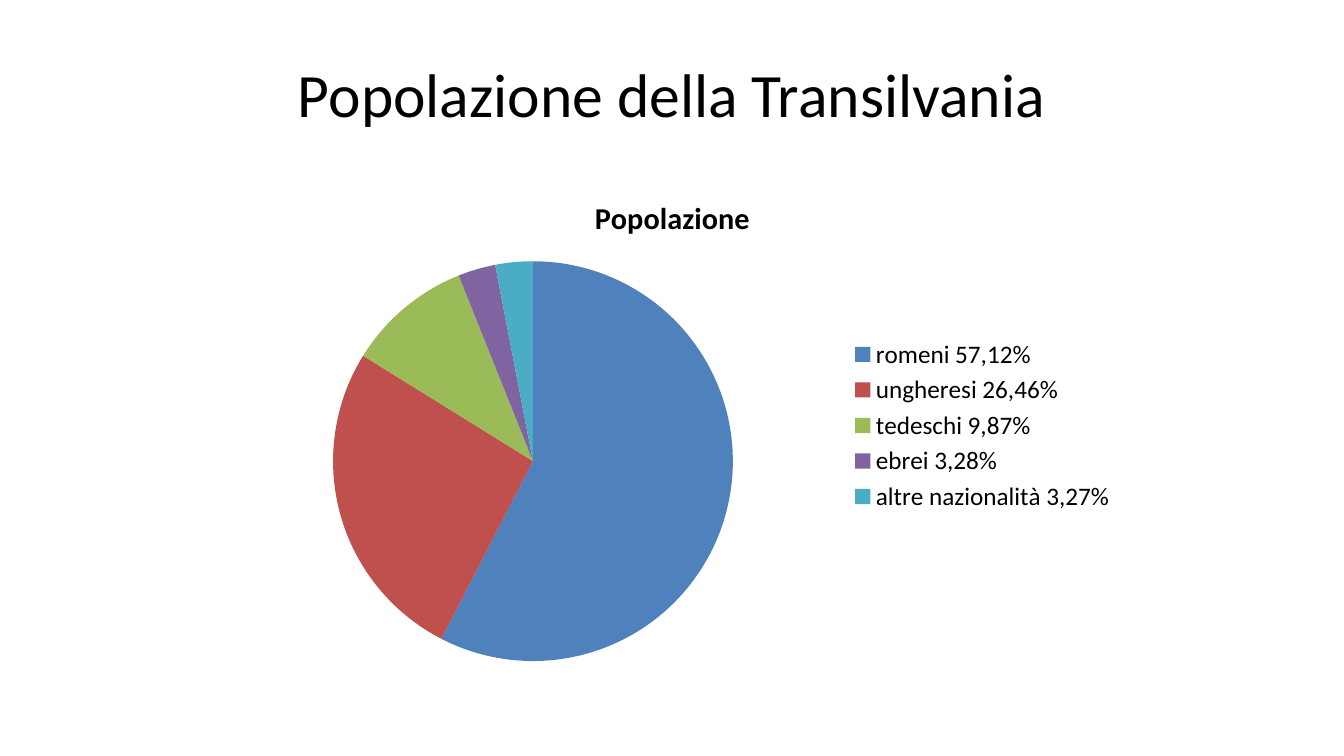
from dataclasses import dataclass

from pptx import Presentation
from pptx.chart.data import CategoryChartData
from pptx.dml.color import RGBColor
from pptx.enum.chart import XL_CHART_TYPE, XL_LEGEND_POSITION
from pptx.enum.text import MSO_ANCHOR, PP_ALIGN
from pptx.util import Emu, Pt

# Content
TITLE = "Popolazione della Transilvania"
SERIES_NAME = "Popolazione"
GROUPS = [  # label, share in whole percent, slice colour
    ("romeni 57,12%", 57, "4F81BD"),
    ("ungheresi 26,46%", 26, "C0504D"),
    ("tedeschi 9,87%", 10, "9BBB59"),
    ("ebrei 3,28%", 3, "8064A2"),
    ("altre nazionalità 3,27%", 3, "4BACC6"),
]

# Layout in px: left, top, width, height
PX_PER_INCH = 100.8
SLIDE_SIZE = (1344, 756)
TITLE_BOX = (67, 30, 1210, 126)
CHART_BOX = (219, 176, 907, 499)


@dataclass(frozen=True)
class Theme:
    font: str = "Calibri"
    text: str = "000000"
    background: str = "FFFFFF"
    title_size: float = 44
    chart_title_size: float = 21.6
    legend_size: float = 18


THEME = Theme()


def px(length):
    return Emu(round(length * 914400 / PX_PER_INCH))


def style_font(font, size, bold=False):
    font.name = THEME.font
    font.size = Pt(size)
    font.bold = bold
    font.color.rgb = RGBColor.from_string(THEME.text)


def add_title(slide):
    title = slide.shapes.title
    title.left, title.top, title.width, title.height = map(px, TITLE_BOX)
    frame = title.text_frame
    frame.word_wrap = True
    frame.vertical_anchor = MSO_ANCHOR.MIDDLE
    paragraph = frame.paragraphs[0]
    paragraph.alignment = PP_ALIGN.CENTER
    run = paragraph.add_run()
    run.text = TITLE
    style_font(run.font, THEME.title_size)


def add_population_chart(slide):
    labels, shares, colours = zip(*GROUPS)
    data = CategoryChartData()
    data.categories = labels
    data.add_series(SERIES_NAME, shares)
    chart = slide.shapes.add_chart(
        XL_CHART_TYPE.PIE, *map(px, CHART_BOX), data).chart
    style_font(chart.font, THEME.legend_size)

    # Chart title
    chart.has_title = True
    chart.chart_title.include_in_layout = False
    run = chart.chart_title.text_frame.paragraphs[0].add_run()
    run.text = SERIES_NAME
    style_font(run.font, THEME.chart_title_size, bold=True)

    # Legend
    chart.has_legend = True
    chart.legend.position = XL_LEGEND_POSITION.RIGHT
    chart.legend.include_in_layout = False
    style_font(chart.legend.font, THEME.legend_size)

    # Slices
    plot = chart.plots[0]
    plot.vary_by_categories = True
    for index, colour in enumerate(colours):
        fill = plot.series[0].points[index].format.fill
        fill.solid()
        fill.fore_color.rgb = RGBColor.from_string(colour)


def main():
    presentation = Presentation()
    presentation.slide_width, presentation.slide_height = map(px, SLIDE_SIZE)
    title_only = presentation.slide_layouts[5]
    slide = presentation.slides.add_slide(title_only)
    background = slide.background.fill
    background.solid()
    background.fore_color.rgb = RGBColor.from_string(THEME.background)
    add_title(slide)
    add_population_chart(slide)
    presentation.save("out.pptx")


if __name__ == "__main__":
    main()
